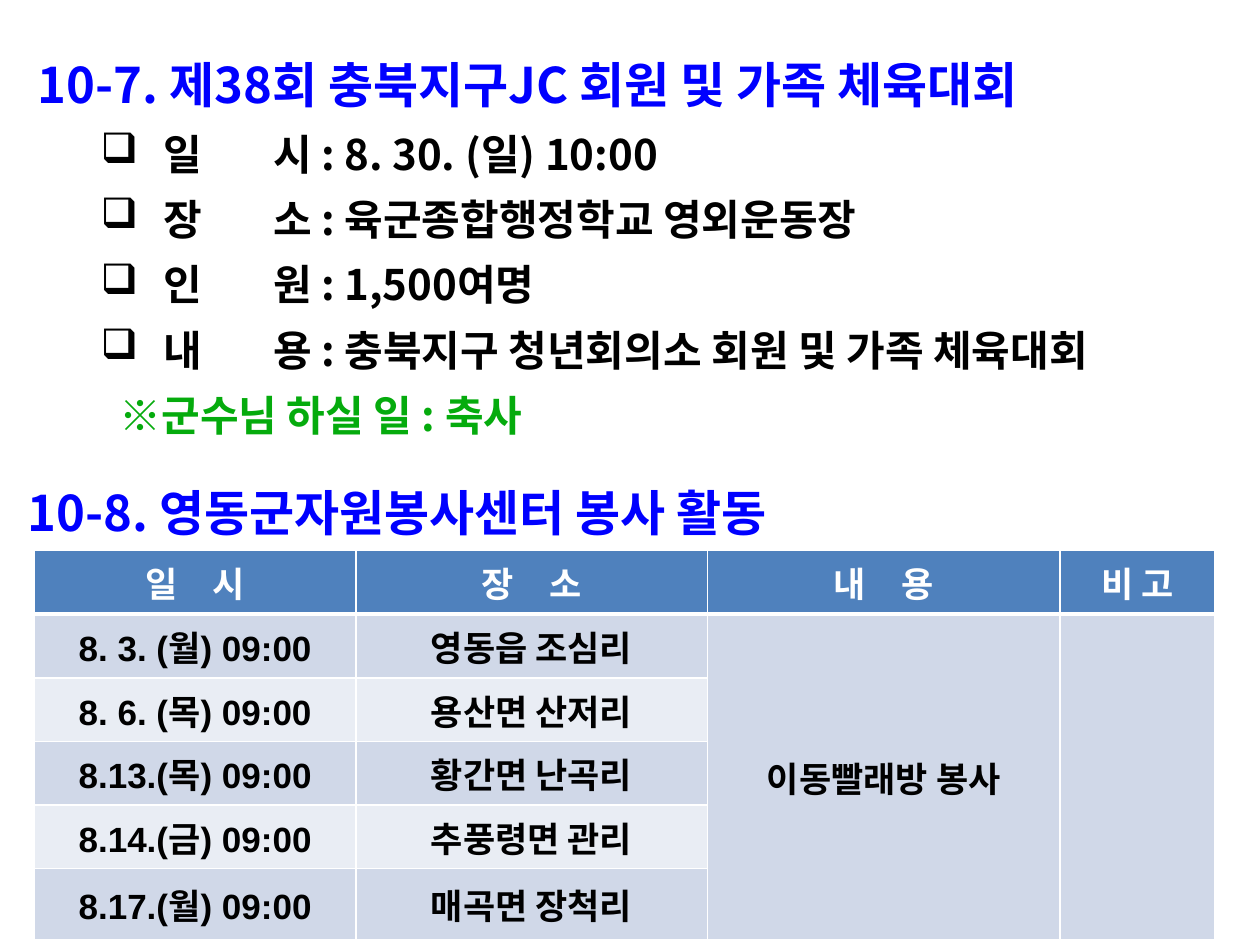
from lxml import etree
from pptx import Presentation
from pptx.dml.color import RGBColor
from pptx.enum.text import MSO_ANCHOR, PP_ALIGN
from pptx.oxml.ns import qn
from pptx.util import Pt

MIDDLE = MSO_ANCHOR.MIDDLE
CENTER = PP_ALIGN.CENTER

BLACK, WHITE, GREEN = "000000", "FFFFFF", "05AB0D"
HEADER_FILL, BAND_FILLS = "4F81BD", ("D0D8E8", "E9EDF4")
HEADING = {"name": "Noto Sans CJK KR", "size": Pt(28), "bold": True, "color": "0000FF"}
ITEM = {**HEADING, "size": Pt(24), "color": BLACK}
NOTE = {**ITEM, "color": GREEN}
BODY_CELL = {"name": "Arial", "size": Pt(20), "bold": True, "color": BLACK}
HEADER_CELL = {**BODY_CELL, "color": WHITE}

EVENT_HEADING = "10-7. 제38회 충북지구JC 회원 및 가족 체육대회"
EVENT_ITEMS = [
    "일\t시 : 8. 30. (일) 10:00",
    "장\t소 : 육군종합행정학교 영외운동장",
    "인\t원 : 1,500여명",
    "내\t용 : 충북지구 청년회의소 회원 및 가족 체육대회",
]
EVENT_NOTE = "※군수님 하실 일 : 축사"

SERVICE_HEADING = "10-8. 영동군자원봉사센터 봉사 활동"
SERVICE_HEADERS = ["일　시", "장　소", "내　용", "비 고"]
SERVICE_VISITS = [
    ("8. 3. (월) 09:00", "영동읍 조심리"),
    ("8. 6. (목) 09:00", "용산면 산저리"),
    ("8.13.(목) 09:00", "황간면 난곡리"),
    ("8.14.(금) 09:00", "추풍령면 관리"),
    ("8.17.(월) 09:00", "매곡면 장척리"),
]
SERVICE_ACTIVITY = "이동빨래방 봉사"
COLUMN_WIDTHS = [183.6, 200.9, 201.6, 88.6]
ROW_HEIGHTS = [27.4, 36.7, 33.1, 33.1, 33.8, 41]


def rgb(color):
    return RGBColor.from_string(color)


def add_run(paragraph, text, style):
    run = paragraph.add_run()
    run.text = text
    for name, value in style.items():
        if name == "color":
            run.font.color.rgb = rgb(value)
        else:
            setattr(run.font, name, value)


def add_child(parent, tag, **attributes):
    child = etree.SubElement(parent, qn(tag))
    for name, value in attributes.items():
        child.set(name, str(value))
    return child


def indent(paragraph, margin, first_line=0):
    properties = paragraph._p.get_or_add_pPr()
    properties.set("lvl", "1")
    properties.set("marL", str(Pt(margin)))
    properties.set("indent", str(Pt(first_line)))
    return properties


def add_bullet_and_tab(paragraph):
    """Hang a square bullet and align the second syllable of the label."""
    properties = indent(paragraph, 72, -36)
    add_child(add_child(properties, "a:buClr"), "a:srgbClr", val=BLACK)
    add_child(properties, "a:buChar", char="❑")
    tabs = add_child(properties, "a:tabLst")
    add_child(tabs, "a:tab", pos=Pt(134.6), algn="l")


def add_text_frame(slide, left, top, width, height):
    box = slide.shapes.add_textbox(Pt(left), Pt(top), Pt(width), Pt(height))
    box.text_frame.word_wrap = False
    return box.text_frame


def add_event(slide, left, top, width, height):
    frame = add_text_frame(slide, left, top, width, height)
    add_run(frame.paragraphs[0], EVENT_HEADING, HEADING)
    for item in EVENT_ITEMS:
        paragraph = frame.add_paragraph()
        add_bullet_and_tab(paragraph)
        add_run(paragraph, item, ITEM)
    note = frame.add_paragraph()
    indent(note, 46.8)
    add_run(note, EVENT_NOTE, NOTE)
    for paragraph in frame.paragraphs:
        paragraph.line_spacing = 1.3


def add_service_heading(slide, left, top, width, height):
    paragraph = add_text_frame(slide, left, top, width, height).paragraphs[0]
    paragraph.line_spacing = 1.5
    add_run(paragraph, SERVICE_HEADING, HEADING)


def format_cell(cell, fill, bottom_width=1):
    properties = cell._tc.get_or_add_tcPr()
    for side, width in (("L", 1), ("R", 1), ("T", 1), ("B", bottom_width)):
        line = add_child(properties, f"a:ln{side}", w=Pt(width))
        add_child(add_child(line, "a:solidFill"), "a:srgbClr", val=WHITE)
    cell.fill.solid()
    cell.fill.fore_color.rgb = rgb(fill)
    cell.vertical_anchor = MIDDLE


def write_cell(cell, text, style):
    paragraph = cell.text_frame.paragraphs[0]
    paragraph.alignment = CENTER
    add_run(paragraph, text, style)


def add_service_table(slide, left, top):
    table = slide.shapes.add_table(
        len(ROW_HEIGHTS), len(COLUMN_WIDTHS), Pt(left), Pt(top),
        Pt(sum(COLUMN_WIDTHS)), Pt(sum(ROW_HEIGHTS))).table
    for column, width in zip(table.columns, COLUMN_WIDTHS):
        column.width = Pt(width)
    for row, height in zip(table.rows, ROW_HEIGHTS):
        row.height = Pt(height)

    for column, text in enumerate(SERVICE_HEADERS):
        format_cell(table.cell(0, column), HEADER_FILL, bottom_width=3)
        write_cell(table.cell(0, column), text, HEADER_CELL)
    for row, visit in enumerate(SERVICE_VISITS, start=1):
        for column in range(len(COLUMN_WIDTHS)):
            band = (row - 1) % 2 if column < len(visit) else 0
            format_cell(table.cell(row, column), BAND_FILLS[band])
        for column, text in enumerate(visit):
            write_cell(table.cell(row, column), text, BODY_CELL)

    for column in (2, 3):
        table.cell(1, column).merge(table.cell(len(SERVICE_VISITS), column))
    write_cell(table.cell(1, 2), SERVICE_ACTIVITY, BODY_CELL)


def main():
    presentation = Presentation()
    presentation.slide_width, presentation.slide_height = Pt(720), Pt(540)
    slide = presentation.slides.add_slide(presentation.slide_layouts[6])
    add_service_table(slide, 19.7, 314.6)
    add_service_heading(slide, 8.6, 255.6, 675.4, 52.6)
    add_event(slide, 14.4, 17.3, 675.4, 236.2)
    presentation.save("out.pptx")


if __name__ == "__main__":
    main()
